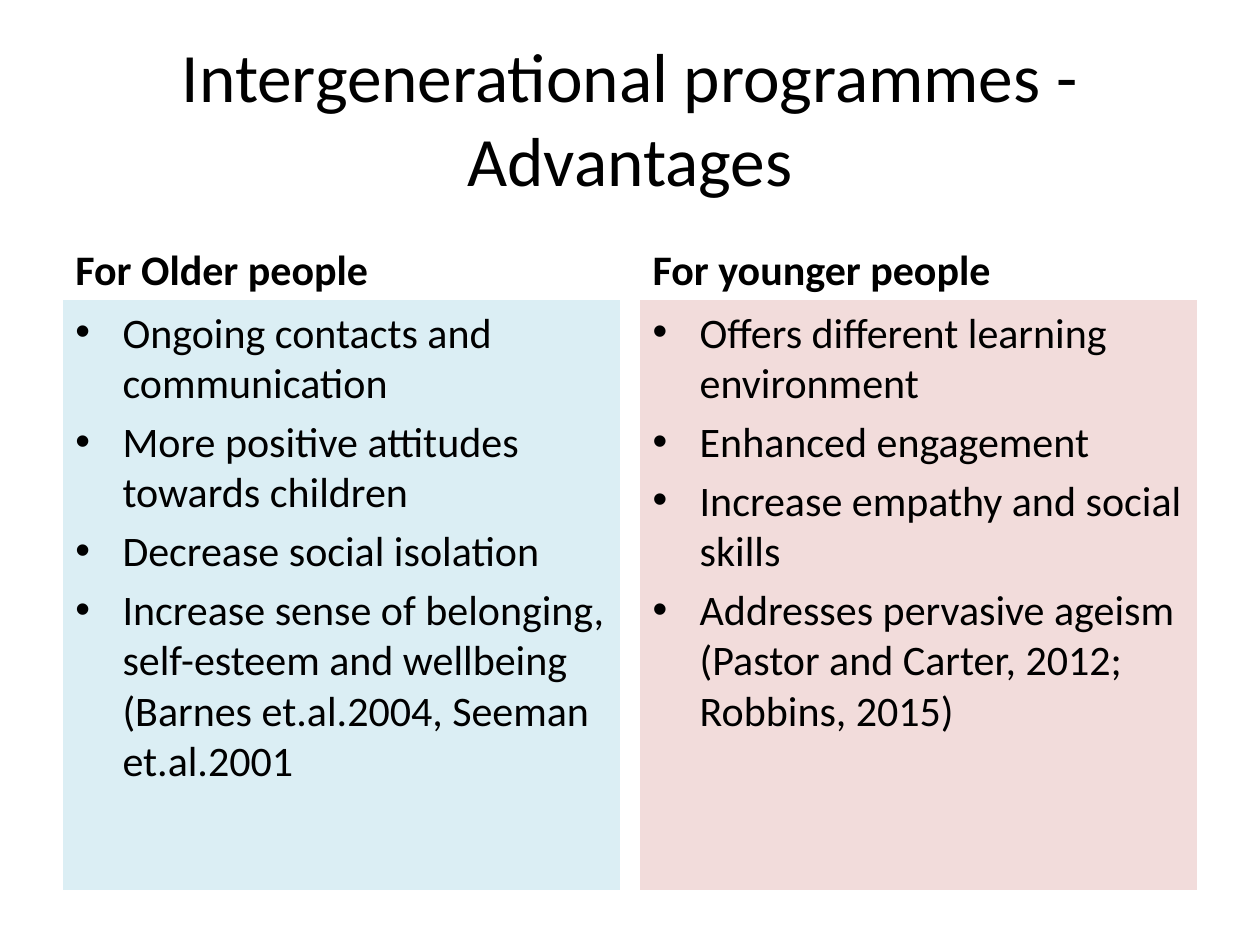
import pptx
import pptx.dml.color
import pptx.enum.text
import pptx.util
from pptx.enum.text import MSO_ANCHOR, PP_ALIGN
from pptx.util import Cm

FONT = "Calibri"
TITLE = "Intergenerational programmes - Advantages"
COLUMNS = [
    ("For Older people", "DBEEF4", [
        "Ongoing contacts and communication",
        "More positive attitudes towards children",
        "Decrease social isolation",
        "Increase sense of belonging, self-esteem and wellbeing "
        "(Barnes et.al.2004, Seeman et.al.2001",
    ]),
    ("For younger people", "F2DCDB", [
        "Offers different learning environment",
        "Enhanced engagement",
        "Increase empathy and social skills",
        "Addresses pervasive ageism (Pastor and Carter, 2012; Robbins, 2015)",
    ]),
]


def color(value):
    return pptx.dml.color.RGBColor.from_string(value)


def add_bullet(paragraph, indent):
    properties = paragraph._p.get_or_add_pPr()
    properties.set("marL", str(indent))
    properties.set("indent", str(-indent))
    namespace = pptx.oxml.ns.qn
    font = properties.makeelement(namespace("a:buFont"), {"typeface": "Arial"})
    bullet = properties.makeelement(namespace("a:buChar"), {"char": "•"})
    properties.extend([font, bullet])


def add_text(slide, box, lines, size=24, bold=False, fill="FFFFFF",
             align=PP_ALIGN.LEFT, anchor=MSO_ANCHOR.TOP, bulleted=False):
    shape = slide.shapes.add_textbox(*box)
    shape.fill.solid()
    shape.fill.fore_color.rgb = color(fill)
    frame = shape.text_frame
    frame.word_wrap = True
    frame.vertical_anchor = anchor
    for index, line in enumerate(lines):
        paragraph = frame.paragraphs[0] if index == 0 else frame.add_paragraph()
        paragraph.alignment = align
        if index:
            paragraph.space_before = pptx.util.Pt(size * 0.2)
        if bulleted:
            add_bullet(paragraph, Cm(0.95))
        run = paragraph.add_run()
        run.text = line
        run.font.name = FONT
        run.font.size = pptx.util.Pt(size)
        run.font.bold = bold
        run.font.color.rgb = color("000000")


def add_column(slide, box, heading, fill, points):
    left, top, width, height = box
    heading_height = Cm(1.78)
    add_text(slide, (left, top, width, heading_height), [heading],
             bold=True, anchor=MSO_ANCHOR.BOTTOM)
    add_text(slide, (left, top + heading_height, width, height - heading_height),
             points, fill=fill, bulleted=True)


def add_comparison(slide, box):
    left, top, width, height = box
    gap = Cm(0.41)
    column_width = (width - gap) // 2
    for index, column in enumerate(COLUMNS):
        column_left = left + index * (column_width + gap)
        add_column(slide, (column_left, top, column_width, height), *column)


def main():
    presentation = pptx.Presentation()
    presentation.slide_width = Cm(25.4)
    presentation.slide_height = Cm(19.05)
    slide = presentation.slides.add_slide(presentation.slide_layouts[6])
    margin = Cm(1.27)
    width = presentation.slide_width - 2 * margin
    add_text(slide, (margin, Cm(0.74), width, Cm(3.23)), [TITLE], size=39.6,
             align=PP_ALIGN.CENTER, anchor=MSO_ANCHOR.MIDDLE)
    add_comparison(slide, (margin, Cm(4.27), width, Cm(13.67)))
    presentation.save("out.pptx")


if __name__ == "__main__":
    main()
